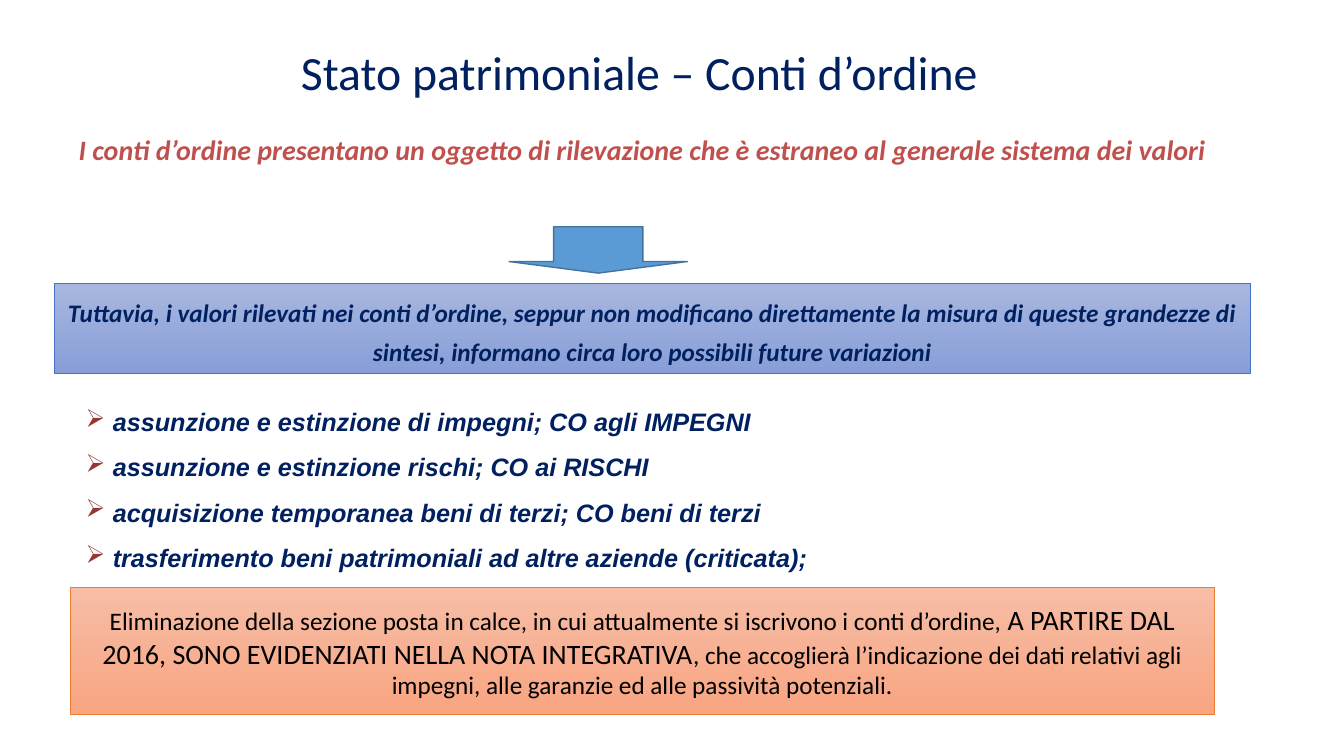
"""Build the slide on memorandum accounts in the balance sheet."""
from dataclasses import dataclass

import lxml.etree
import pptx
import pptx.dml.color
import pptx.enum.shapes
import pptx.enum.text
import pptx.oxml.ns
import pptx.util

ALIGN = pptx.enum.text.PP_ALIGN
ANCHOR = pptx.enum.text.MSO_ANCHOR
PRESET = pptx.enum.shapes.MSO_SHAPE


@dataclass(frozen=True)
class Theme:
    navy: str = "002060"
    red: str = "C0504D"
    black: str = "000000"
    bullet: str = "953735"
    arrow: str = "5B9BD5"
    arrow_edge: str = "43739E"
    title_size: float = 34.1
    large_size: float = 20
    body_size: float = 18
    text_font: str = "Calibri"
    list_font: str = "Arial"


THEME = Theme()


@dataclass(frozen=True)
class Area:
    """Percentages of the slide's width and height."""
    left: float
    top: float
    width: float
    height: float


@dataclass(frozen=True)
class Style:
    size: float
    color: str
    font: str = THEME.text_font
    emphasis: bool = False
    align: ALIGN = ALIGN.CENTER
    spacing: float = 1.0


@dataclass(frozen=True)
class Panel:
    area: Area
    colors: tuple[str, str]
    edge: str
    anchor: ANCHOR
    style: Style
    spans: tuple[tuple[str, float], ...]


WIDTH, HEIGHT = pptx.util.Inches(13.33), pptx.util.Inches(7.5)
LIST_INDENT = pptx.util.Inches(0.27)
TITLE_AREA = Area(2.55, 5.73, 90.02, 7.47)
LEAD_AREA = Area(2.48, 16.4, 90.62, 11.47)
ARROW_AREA = Area(37.88, 30, 13.28, 6.13)
LIST_AREA = Area(5.63, 51.07, 87.47, 25.47)

TITLE_STYLE = Style(THEME.title_size, THEME.navy)
LEAD_STYLE = Style(THEME.large_size, THEME.red, emphasis=True, spacing=1.1)
LIST_STYLE = Style(THEME.body_size, THEME.navy, THEME.list_font, True, ALIGN.LEFT, 1.5)

TITLE = "Stato patrimoniale – Conti d’ordine"
LEAD = "I conti d’ordine presentano un oggetto di rilevazione che è estraneo al generale sistema dei valori"
ENTRIES = (
    "assunzione e estinzione di impegni; CO agli IMPEGNI",
    "assunzione e estinzione rischi; CO ai RISCHI",
    "acquisizione temporanea beni di terzi; CO beni di terzi",
    "trasferimento beni patrimoniali ad altre aziende (criticata);",
)
PANELS = (
    Panel(
        Area(4.05, 37.47, 88.97, 11.87), ("A8B7DF", "889ED7"), "4472C4", ANCHOR.TOP,
        Style(THEME.body_size, THEME.navy, emphasis=True, spacing=1.3),
        (("Tuttavia, i valori rilevati nei conti d’ordine, seppur non modificano direttamente "
          "la misura di queste grandezze di sintesi, informano circa loro possibili future variazioni",
          THEME.body_size),),
    ),
    Panel(
        Area(5.25, 77.73, 85.07, 16.8), ("F7BDA5", "F8A582"), "ED7D31", ANCHOR.MIDDLE,
        Style(THEME.body_size, THEME.black),
        (("Eliminazione della sezione posta in calce, in cui attualmente si iscrivono i conti d’ordine, ",
          THEME.body_size),
         ("A PARTIRE DAL 2016, SONO EVIDENZIATI NELLA NOTA INTEGRATIVA", THEME.large_size),
         (", che accoglierà l’indicazione dei dati relativi agli impegni, alle garanzie "
          "ed alle passività potenziali.", THEME.body_size)),
    ),
)


def rgb(value: str) -> pptx.dml.color.RGBColor:
    return pptx.dml.color.RGBColor.from_string(value)


def place(area: Area) -> tuple[int, int, int, int]:
    return (round(WIDTH * area.left / 100), round(HEIGHT * area.top / 100),
            round(WIDTH * area.width / 100), round(HEIGHT * area.height / 100))


def format_text(frame, style: Style) -> None:
    frame.word_wrap = True
    for para in frame.paragraphs:
        para.alignment = style.align
        para.line_spacing = style.spacing
        for span in para.runs:
            span.font.name = style.font
            span.font.size = pptx.util.Pt(style.size)
            span.font.bold = span.font.italic = style.emphasis
            span.font.color.rgb = rgb(style.color)


def add_bullet(para) -> None:
    properties = para._p.get_or_add_pPr()
    properties.set("marL", str(LIST_INDENT))
    properties.set("indent", str(-LIST_INDENT))
    name = pptx.oxml.ns.qn
    color = lxml.etree.SubElement(properties, name("a:buClr"))
    lxml.etree.SubElement(color, name("a:srgbClr"), val=THEME.bullet)
    lxml.etree.SubElement(properties, name("a:buChar"), char="➢")


def draw_title(page) -> None:
    title = page.shapes.title
    title.left, title.top, title.width, title.height = place(TITLE_AREA)
    title.text_frame.text = TITLE
    title.text_frame.auto_size = pptx.enum.text.MSO_AUTO_SIZE.NONE
    title.text_frame.vertical_anchor = ANCHOR.MIDDLE
    format_text(title.text_frame, TITLE_STYLE)


def draw_text(page, area: Area, text: str, style: Style):
    frame = page.shapes.add_textbox(*place(area)).text_frame
    frame.text = text
    format_text(frame, style)
    return frame


def draw_shape(page, preset: PRESET, area: Area, edge: str, edge_width: float):
    shape = page.shapes.add_shape(preset, *place(area))
    shape.shadow.inherit = False
    shape.line.color.rgb = rgb(edge)
    shape.line.width = pptx.util.Pt(edge_width)
    return shape


def draw_panel(page, panel: Panel) -> None:
    shape = draw_shape(page, PRESET.RECTANGLE, panel.area, panel.edge, 0.5)
    shape.fill.gradient()
    shape.fill.gradient_angle = 270
    for stop, color in zip(shape.fill.gradient_stops, panel.colors):
        stop.color.rgb = rgb(color)
    frame = shape.text_frame
    frame.vertical_anchor = panel.anchor
    para = frame.paragraphs[0]
    for text, _ in panel.spans:
        para.add_run().text = text
    format_text(frame, panel.style)
    for span, (_, size) in zip(para.runs, panel.spans):
        span.font.size = pptx.util.Pt(size)


def draw_arrow(page) -> None:
    arrow = draw_shape(page, PRESET.DOWN_ARROW, ARROW_AREA, THEME.arrow_edge, 1)
    arrow.fill.solid()
    arrow.fill.fore_color.rgb = rgb(THEME.arrow)
    arrow.adjustments[0], arrow.adjustments[1] = 0.5, 0.25


def main() -> None:
    deck = pptx.Presentation()
    deck.slide_width, deck.slide_height = WIDTH, HEIGHT
    page = deck.slides.add_slide(deck.slide_layouts.get_by_name("Title Only"))
    draw_title(page)
    draw_text(page, LEAD_AREA, LEAD, LEAD_STYLE)
    draw_arrow(page)
    for panel in PANELS:
        draw_panel(page, panel)
    entries = draw_text(page, LIST_AREA, "\n".join(ENTRIES), LIST_STYLE)
    for para in entries.paragraphs:
        add_bullet(para)
    deck.save("out.pptx")


if __name__ == "__main__":
    main()
